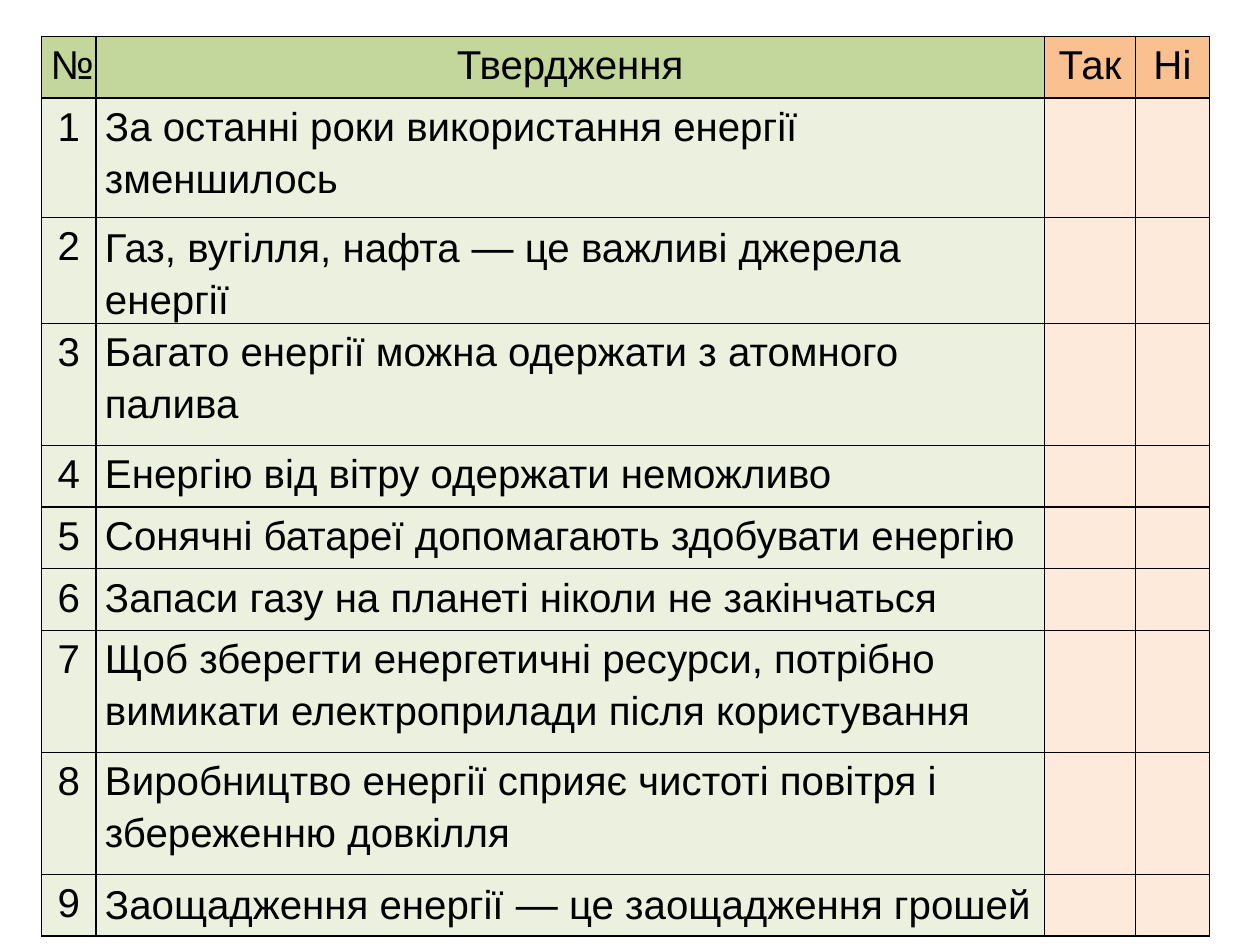
from dataclasses import dataclass
from typing import Optional

import lxml.etree
import pptx
import pptx.dml.color
import pptx.enum.text
import pptx.oxml.ns
import pptx.util

Pt = pptx.util.Pt
Align = pptx.enum.text.PP_ALIGN

INK = "000000"
DASH = "—"
SINGLE, DOUBLE_FIRST, DOUBLE = 35.2, 68.4, 69.8


@dataclass(frozen=True)
class Column:
    heading: str
    width: float
    heading_fill: str
    body_fill: str
    align: Optional[Align] = Align.CENTER


@dataclass(frozen=True)
class Statement:
    wording: str
    height: float = SINGLE


COLUMNS = [
    Column("№", 31, "C3D69B", "EBF1DE"),
    Column("Твердження", 542.2, "C3D69B", "EBF1DE", None),
    Column("Так", 51.8, "FAC090", "FDEADA"),
    Column("Ні", 42.5, "FAC090", "FDEADA"),
]

STATEMENTS = [
    Statement("За останні роки використання енергії зменшилось", DOUBLE_FIRST),
    Statement("Газ, вугілля, нафта — це важливі джерела енергії"),
    Statement("Багато енергії можна одержати з атомного палива", DOUBLE),
    Statement("Енергію від вітру одержати неможливо"),
    Statement("Сонячні батареї допомагають здобувати енергію"),
    Statement("Запаси газу на планеті ніколи не закінчаться"),
    Statement("Щоб зберегти енергетичні ресурси, потрібно вимикати "
              "електроприлади після користування", DOUBLE),
    Statement("Виробництво енергії сприяє чистоті повітря і "
              "збереженню довкілля", DOUBLE),
    Statement("Заощадження енергії — це заощадження грошей"),
]


def color(hex_code: str) -> pptx.dml.color.RGBColor:
    return pptx.dml.color.RGBColor.from_string(hex_code)


def write_text(cell, text: str, *, align: Optional[Align] = None,
               size: float = 23, dash_size: float = 24,
               font: str = "Arial", ink: str = INK) -> None:
    paragraph = cell.text_frame.paragraphs[0]
    paragraph.alignment = align
    paragraph.line_spacing = 1.15
    paragraph.space_after = Pt(10)
    for part in filter(None, text.partition(DASH)):
        run = paragraph.add_run()
        run.text = part
        run.font.size = Pt(dash_size if part == DASH else size)
        run.font.name = font
        run.font.color.rgb = color(ink)


def add_borders(cell, hex_code: str, width: float) -> None:
    qn = pptx.oxml.ns.qn
    properties = cell._tc.get_or_add_tcPr()
    for position, side in enumerate(("a:lnL", "a:lnR", "a:lnT", "a:lnB")):
        border = lxml.etree.Element(qn(side), w=str(int(Pt(width))))
        fill = lxml.etree.SubElement(border, qn("a:solidFill"))
        lxml.etree.SubElement(fill, qn("a:srgbClr"), val=hex_code)
        properties.insert(position, border)


def style_cell(cell, fill: str) -> None:
    cell.fill.solid()
    cell.fill.fore_color.rgb = color(fill)
    cell.margin_left = cell.margin_right = Pt(5.2)
    cell.margin_top = cell.margin_bottom = Pt(0)
    add_borders(cell, INK, 1)


def add_survey(slide, left: float, top: float) -> None:
    heights = [SINGLE] + [statement.height for statement in STATEMENTS]
    width = sum(column.width for column in COLUMNS)
    survey = slide.shapes.add_table(
        len(heights), len(COLUMNS),
        Pt(left), Pt(top), Pt(width), Pt(sum(heights))).table
    for row, height in zip(survey.rows, heights):
        row.height = Pt(height)

    answers = [(str(number), statement.wording, "", "")
               for number, statement in enumerate(STATEMENTS, 1)]
    for index, column in enumerate(COLUMNS):
        survey.columns[index].width = Pt(column.width)
        heading = survey.cell(0, index)
        style_cell(heading, column.heading_fill)
        write_text(heading, column.heading, align=Align.CENTER)
        for row_index, answer in enumerate(answers, 1):
            cell = survey.cell(row_index, index)
            style_cell(cell, column.body_fill)
            if answer[index]:
                write_text(cell, answer[index], align=column.align)


def main() -> None:
    presentation = pptx.Presentation()
    presentation.slide_width = Pt(720)
    presentation.slide_height = Pt(540)
    slide = presentation.slides.add_slide(presentation.slide_layouts[6])
    add_survey(slide, 23.8, 20.8)
    presentation.save("out.pptx")


if __name__ == "__main__":
    main()
